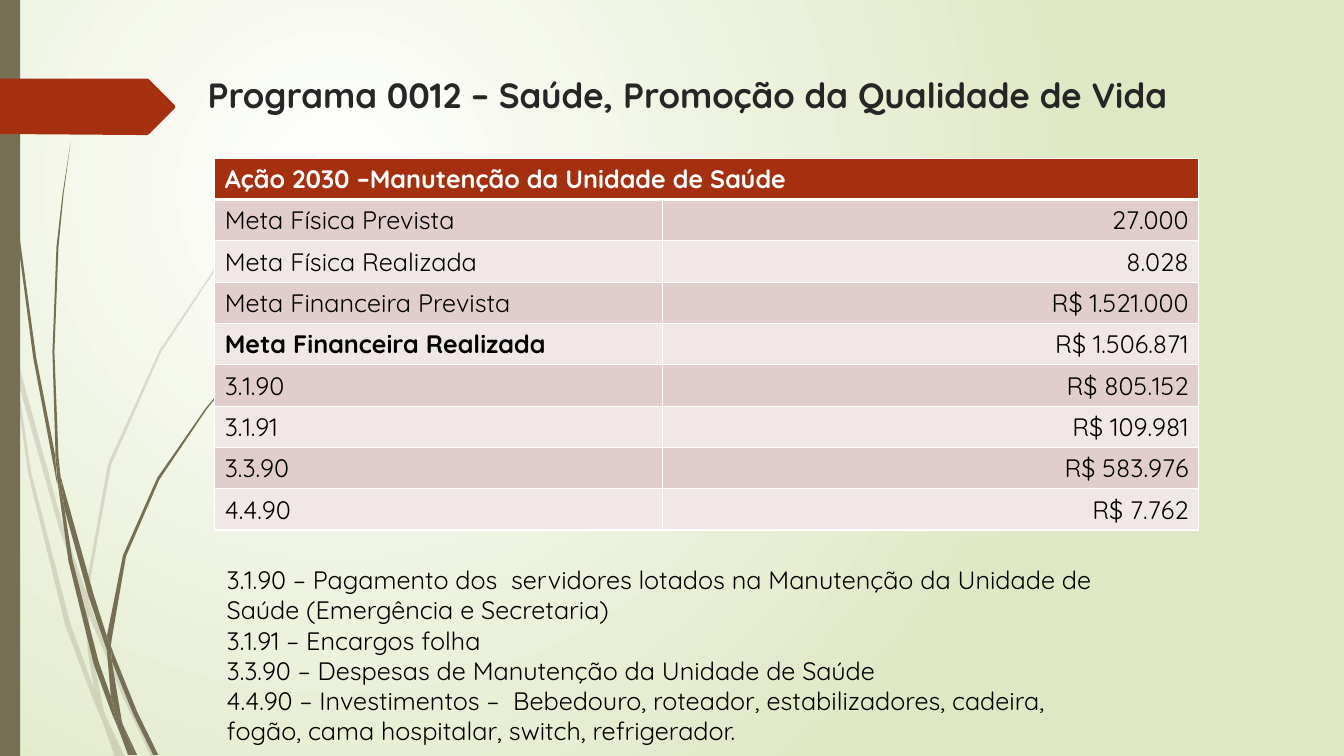
"""Build the health programme slide on a grid of 1333 columns by 750 rows."""
import pptx
import pptx.dml.color
import pptx.enum.dml
import pptx.enum.shapes
import pptx.enum.text
import pptx.oxml
import pptx.oxml.ns
import pptx.util

RGBColor = pptx.dml.color.RGBColor
WHITE = RGBColor(0xFF, 0xFF, 0xFF)
BLACK = RGBColor(0, 0, 0)
CHARCOAL = RGBColor(0x26, 0x26, 0x26)
SAGE = RGBColor(0xDF, 0xE8, 0xC4)
OLIVE = RGBColor(0x76, 0x6F, 0x54)
RUST = RGBColor(0xA5, 0x30, 0x10)
ROSE = RGBColor(0xE1, 0xCD, 0xCC)
PALE_ROSE = RGBColor(0xF0, 0xE8, 0xE7)

FONT = "Quicksand"
COLUMNS, ROWS = 1333, 750
UNIT = 9144
ROW_HEIGHT = 41
DRAWING = pptx.oxml.ns.nsdecls("a")

PALE_GRASS = [
    [(11, 350), (9, 322), (0, 282), (0, 299), (10, 344)],
    [(58, 522), (84, 599), (85, 586), (62, 520), (14, 345), (17, 376)],
    [(92, 607), (88, 596), (88, 610), (123, 694), (150, 751), (155, 751), (127, 692)],
    [(119, 751), (124, 751), (105, 711)],
    [(93, 683), (70, 619), (31, 469), (17, 376), (11, 350), (28, 470), (65, 621),
     (92, 693), (101, 714), (99, 707)],
    [(84, 599), (87, 646), (93, 683), (96, 692), (105, 711), (103, 706), (91, 646),
     (88, 610), (88, 608)],
    [(88, 584), (110, 462), (160, 349), (229, 245), (268, 198), (290, 175), (312, 154),
     (312, 153), (289, 175), (268, 197), (228, 244), (158, 348), (107, 461), (85, 584),
     (85, 586), (88, 596)],
    [(101, 714), (114, 751), (119, 751)],
    [(88, 608), (88, 610), (88, 596), (85, 586), (84, 599)],
    [(96, 692), (93, 683), (99, 707), (101, 714), (119, 751), (105, 711)],
]
DARK_GRASS = [
    [(7, 110), (17, 233), (33, 355), (56, 477), (57, 481), (55, 457), (55, 453), (36, 355),
     (19, 232), (8, 109), (5, 48), (4, 0), (3, 0), (4, 48)],
    [(88, 592), (106, 645), (106, 633), (106, 631), (93, 590), (60, 472), (64, 505)],
    [(113, 649), (110, 641), (111, 656), (132, 708), (152, 749), (157, 749), (136, 706)],
    [(110, 691), (98, 657), (72, 556), (64, 505), (57, 477), (68, 557), (93, 659),
     (111, 708), (117, 722), (116, 717)],
    [(60, 472), (58, 453), (54, 349), (58, 245), (63, 193), (70, 141), (62, 193),
     (56, 245), (52, 349), (55, 449)],
    [(133, 749), (136, 749), (122, 719)],
    [(57, 477), (64, 505), (60, 472), (55, 449), (55, 453)],
    [(111, 633), (125, 552), (158, 476), (205, 406), (231, 374), (245, 359), (261, 344),
     (260, 344), (245, 358), (231, 373), (204, 405), (156, 474), (122, 551), (106, 631),
     (110, 641)],
    [(117, 722), (127, 749), (131, 749)],
    [(106, 645), (110, 691), (116, 706), (122, 719), (121, 716), (111, 656), (109, 651)],
    [(106, 645), (109, 651), (111, 656), (110, 641), (106, 631), (106, 633)],
    [(116, 706), (110, 691), (116, 717), (117, 722), (130, 749), (133, 749), (122, 719)],
]
ARROW_TAG = [(0, 78), (146, 78), (148, 79), (173, 104), (174, 106), (173, 108),
             (148, 133), (146, 134), (136, 134), (0, 133)]

TITLE = "Programa 0012 – Saúde, Promoção da Qualidade de Vida"
TABLE_HEADING = "Ação 2030 –Manutenção da Unidade de Saúde"
BOLD_LABEL = "Meta Financeira Realizada"
TABLE_ROWS = [
    ("Meta Física Prevista", "27.000"),
    ("Meta Física Realizada", "8.028"),
    ("Meta Financeira Prevista", "R$ 1.521.000"),
    (BOLD_LABEL, "R$ 1.506.871"),
    ("3.1.90", "R$ 805.152"),
    ("3.1.91", "R$ 109.981"),
    ("3.3.90", "R$ 583.976"),
    ("4.4.90", "R$ 7.762"),
]
NOTES = [
    "3.1.90 – Pagamento dos  servidores lotados na Manutenção da Unidade de Saúde "
    "(Emergência e Secretaria)",
    "3.1.91 – Encargos folha",
    "3.3.90 – Despesas de Manutenção da Unidade de Saúde",
    "4.4.90 – Investimentos –  Bebedouro, roteador, estabilizadores, cadeira, fogão, "
    "cama hospitalar, switch, refrigerador.",
]


def grid(*cells):
    """Turn grid counts into slide lengths."""
    return [pptx.util.Emu(cell * UNIT) for cell in cells]


def paint_background(slide):
    """Fill the background with a radial gradient."""
    fill = slide.background.fill
    fill.gradient()
    for stop, color in zip(fill.gradient_stops, (WHITE, SAGE)):
        stop.color.rgb = color
    gradient = slide.element.find(".//" + pptx.oxml.ns.qn("a:gradFill"))
    gradient.remove(gradient.find(pptx.oxml.ns.qn("a:lin")))
    gradient.append(pptx.oxml.parse_xml(
        f'<a:path {DRAWING} path="circle">'
        '<a:fillToRect l="50000" t="50000" r="100000" b="100000"/></a:path>'))


def paint_shape(shape, color, opacity=100):
    """Give a shape a plain fill without line or shadow."""
    shape.shadow.inherit = False
    shape.line.fill.background()
    shape.fill.solid()
    shape.fill.fore_color.rgb = color
    if opacity < 100:
        color_element = shape.element.spPr.find(".//" + pptx.oxml.ns.qn("a:srgbClr"))
        color_element.append(pptx.oxml.parse_xml(
            f'<a:alpha {DRAWING} val="{opacity * 1000}"/>'))


def add_outline(shapes, points, color, opacity=100):
    """Draw a closed outline through grid points."""
    builder = shapes.build_freeform(*points[0], scale=UNIT)
    builder.add_line_segments(points[1:], close=True)
    paint_shape(builder.convert_to_shape(), color, opacity)


def add_grass(slide, blades, opacity=100):
    """Draw a group of grass blades."""
    group = slide.shapes.add_group_shape()
    for blade in blades:
        add_outline(group.shapes, blade, OLIVE, opacity)


def format_paragraph(paragraph, size, color, bold=False):
    """Set the font of every run in a paragraph."""
    for run in paragraph.runs:
        run.font.name = FONT
        run.font.size = pptx.util.Pt(size)
        run.font.bold = bold
        run.font.color.rgb = color


def add_text(slide, area, lines, size, color, bold=False):
    """Add a wrapping text box with one paragraph per line."""
    text_frame = slide.shapes.add_textbox(*grid(*area)).text_frame
    text_frame.word_wrap = True
    text_frame.text = "\n".join(lines)
    for paragraph in text_frame.paragraphs:
        format_paragraph(paragraph, size, color, bold)
    return text_frame


def style_cell(cell, fill_color, top=1, bottom=1):
    """Set white borders and a solid fill on a cell."""
    properties = cell._tc.get_or_add_tcPr()
    for side, width in (("L", 1), ("R", 1), ("T", top), ("B", bottom)):
        properties.append(pptx.oxml.parse_xml(
            f'<a:ln{side} {DRAWING} w="{width * 12700}"><a:solidFill>'
            f'<a:srgbClr val="{WHITE}"/></a:solidFill></a:ln{side}>'))
    cell.fill.solid()
    cell.fill.fore_color.rgb = fill_color


def add_goal_table(slide):
    """Add the table of planned and achieved goals."""
    count = len(TABLE_ROWS) + 1
    area = grid(213, 157, 976, ROW_HEIGHT * count)
    table = slide.shapes.add_table(count, 2, *area).table
    for column, width in zip(table.columns, grid(444, 532)):
        column.width = width
    for cell in table.rows[0].cells:
        style_cell(cell, RUST, bottom=3)
    heading = table.cell(0, 0)
    heading.merge(table.cell(0, 1))
    heading.text_frame.text = TABLE_HEADING
    format_paragraph(heading.text_frame.paragraphs[0], 18, WHITE, True)
    for row, texts in enumerate(TABLE_ROWS, 1):
        for column, text in enumerate(texts):
            cell = table.cell(row, column)
            style_cell(cell, ROSE if row % 2 else PALE_ROSE, top=3 if row == 1 else 1)
            cell.text_frame.text = text
            paragraph = cell.text_frame.paragraphs[0]
            format_paragraph(paragraph, 18, BLACK, text == BOLD_LABEL)
            if column == 1:
                paragraph.alignment = pptx.enum.text.PP_ALIGN.RIGHT


def main():
    """Build and save the presentation."""
    presentation = pptx.Presentation()
    presentation.slide_width, presentation.slide_height = grid(COLUMNS, ROWS)
    slide = presentation.slides.add_slide(presentation.slide_layouts[6])
    paint_background(slide)
    add_grass(slide, PALE_GRASS, opacity=20)
    add_grass(slide, DARK_GRASS)
    side_bar = slide.shapes.add_shape(
        pptx.enum.shapes.MSO_SHAPE.RECTANGLE, *grid(0, 0, 20, ROWS))
    paint_shape(side_bar, OLIVE)
    add_outline(slide.shapes, ARROW_TAG, RUST)
    add_text(slide, (196, 68, 1062, 63), [TITLE], 25, CHARCOAL, True)
    add_goal_table(slide)
    notes = add_text(slide, (215, 555, 888, 192), NOTES, 18, BLACK)
    notes.auto_size = pptx.enum.text.MSO_AUTO_SIZE.SHAPE_TO_FIT_TEXT
    presentation.save("out.pptx")


if __name__ == "__main__":
    main()
